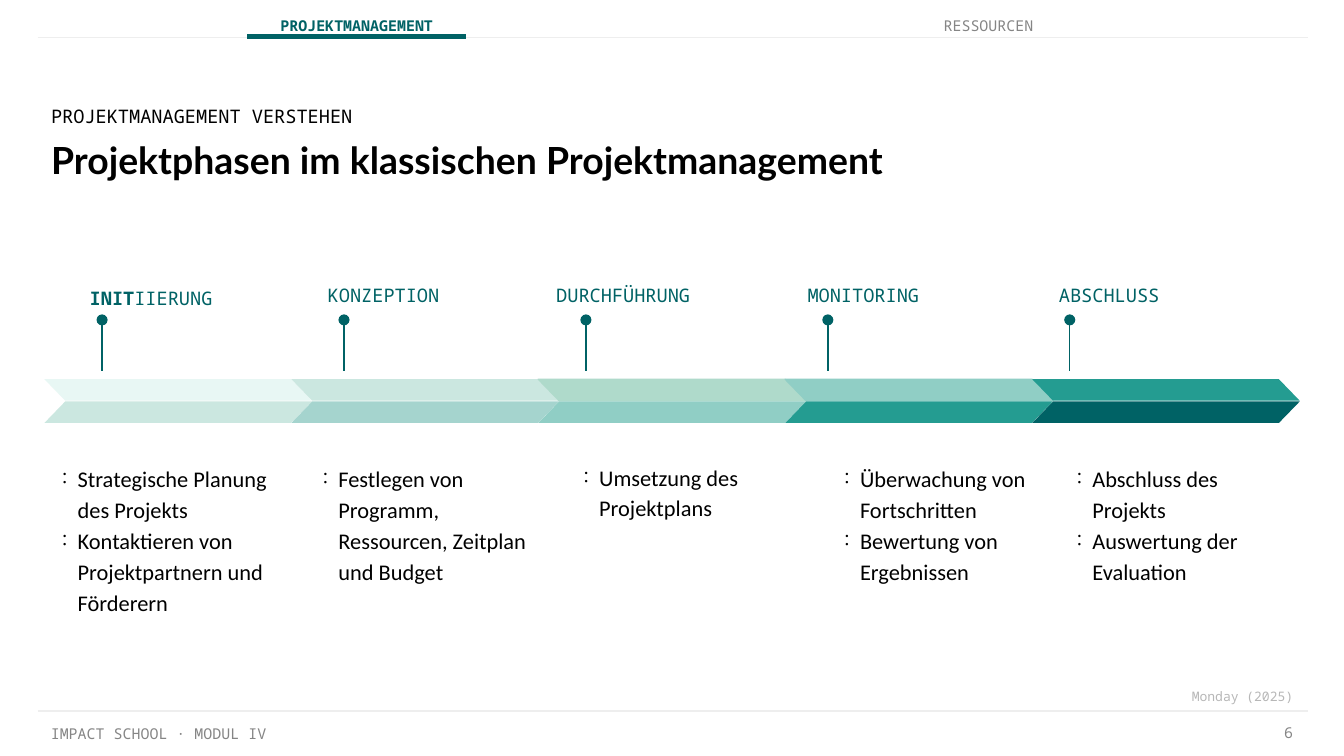
from pptx import Presentation
from pptx.dml.color import RGBColor
from pptx.enum.shapes import MSO_CONNECTOR, MSO_SHAPE
from pptx.enum.text import MSO_ANCHOR, MSO_AUTO_SIZE, PP_ALIGN
from pptx.oxml.ns import qn
from pptx.util import Pt
from lxml import etree

STRAIGHT = MSO_CONNECTOR.STRAIGHT
PARALLELOGRAM = MSO_SHAPE.PARALLELOGRAM
TOP, MIDDLE = MSO_ANCHOR.TOP, MSO_ANCHOR.MIDDLE
LEFT, CENTER, RIGHT = PP_ALIGN.LEFT, PP_ALIGN.CENTER, PP_ALIGN.RIGHT
NO_FIT = MSO_AUTO_SIZE.NONE

MONO, HEADING, BODY = "Noto Sans Mono", "Lato", "Calibri"
BLACK, TEAL, GRAY, PALE, RULE = "000000", "006265", "858585", "B7B7B7", "EEEEEE"

TITLE = "Projektphasen im klassischen Projektmanagement"
SUBTITLE = "PROJEKTMANAGEMENT VERSTEHEN"
FRAME_TEXTS = [
    ("IMPACT SCHOOL · MODUL IV", (20.16, 380.9, 453.6, 24.5), dict(size=8, color=GRAY)),
    ("6", (668.9, 380.9, 31, 24.5),
     dict(size=8, color=GRAY, align=RIGHT, anchor=MIDDLE, spacing=0.8)),
    ("PROJEKTMANAGEMENT", (128.2, 1.44, 126, 24.5),
     dict(size=8, color=TEAL, bold=True, align=CENTER, anchor=MIDDLE, side=0)),
    ("RESSOURCEN", (466.6, 1.44, 126, 24.5),
     dict(size=8, color=GRAY, align=CENTER, anchor=MIDDLE)),
    ("Monday (2025)", (308.2, 361.4, 391.7, 23), dict(size=7, color=PALE, align=RIGHT)),
]
FRAME_LINES = [
    (20.16, 700.5, 380.9, RULE, 0.75),
    (20.16, 700.5, 20.16, RULE, 0.75),
    (132.5, 249.8, 19.6, TEAL, 2.25),
]
PHASES = [
    dict(lead="INIT", label="IIERUNG", label_left=41, spacing=1.15,
         colors=("E8F7F4", "CBE7E0"), list_left=25.9, list_top=239.8, list_width=126.7,
         tasks=["Strategische Planung des Projekts",
                "Kontaktieren von Projektpartnern und Förderern"]),
    dict(label="KONZEPTION", label_left=168.5,
         colors=("CBE7E0", "A5D4CE"), list_left=165.6, list_top=239.8, list_width=126.7,
         tasks=["Festlegen von Programm, Ressourcen, Zeitplan und Budget"]),
    dict(label="DURCHFÜHRUNG", label_left=290.9, outlined=True,
         colors=("AFDACB", "90CEC5"), list_left=305.3, list_top=239.1, list_width=126.7,
         tasks=["Umsetzung des Projektplans"]),
    dict(label="MONITORING", label_left=425.5, outlined=True,
         colors=("90CEC5", "249C91"), list_left=445, list_top=239.8, list_width=111.6,
         tasks=["Überwachung von Fortschritten", "Bewertung von Ergebnissen"]),
    dict(label="ABSCHLUSS", label_left=560.2,
         colors=("249C91", TEAL), list_left=569.5, list_top=239.8, list_width=126.7,
         tasks=["Abschluss des Projekts", "Auswertung der Evaluation"]),
]

BAND_LEFT, BAND_STEP, BAND_WIDTH, BAND_HEIGHT = 23.8, 132.3, 143.3, 11.5
BAND_TOPS = (203.2, 215.1)
PIN_LEFT, PIN_STEP, PIN_TOP, PIN_BOTTOM = 54.7, 129.6, 171.4, 198.7


def rgb(color):
    """Turn a hex string into a colour."""
    return RGBColor.from_string(color)


def place(shape, box):
    """Move a shape to a box of left, top, width and height in points."""
    shape.left, shape.top, shape.width, shape.height = map(Pt, box)
    return shape


def add_bullet(paragraph):
    """Give a paragraph a hanging colon bullet."""
    properties = paragraph._p.get_or_add_pPr()
    properties.set("marL", str(Pt(8.64)))
    properties.set("indent", str(-Pt(8.64)))
    color = etree.SubElement(properties, qn("a:buClr"))
    etree.SubElement(color, qn("a:srgbClr"), val=BLACK)
    etree.SubElement(properties, qn("a:buSzPct"), val="99000")
    etree.SubElement(properties, qn("a:buChar"), char=":")


def write(shape, *lines, lead="", size=10, font=MONO, color=BLACK, bold=False,
          align=LEFT, anchor=TOP, spacing=1.0, side=7.2, bullet=False):
    """Fill a shape with formatted paragraphs, after an optional bold lead."""
    frame = shape.text_frame
    frame.word_wrap, frame.auto_size, frame.vertical_anchor = True, NO_FIT, anchor
    frame.margin_left = frame.margin_right = Pt(side)
    frame.margin_top = frame.margin_bottom = Pt(7.2)
    for index, line in enumerate(lines):
        paragraph = frame.add_paragraph() if index else frame.paragraphs[0]
        if bullet:
            add_bullet(paragraph)
        paragraph.alignment, paragraph.line_spacing = align, spacing
        paragraph.space_before = Pt(0)
        for text, weight in ((lead, True), (line, bold)):
            if text:
                run = paragraph.add_run()
                run.text = text
                run.font.size, run.font.name, run.font.bold = Pt(size), font, weight
                run.font.color.rgb = rgb(color)


def add_text(slide, box, *lines, **style):
    """Add a text box with formatted paragraphs."""
    write(slide.shapes.add_textbox(*map(Pt, box)), *lines, **style)


def add_line(slide, start, end, color, width, dot=False):
    """Add a straight line, with a dot at its start if wanted."""
    line = slide.shapes.add_connector(STRAIGHT, *map(Pt, start + end))
    line.line.color.rgb = rgb(color)
    line.line.width = Pt(width)
    properties = line.element.spPr
    if dot:
        etree.SubElement(properties.find(qn("a:ln")), qn("a:headEnd"), type="oval")
    etree.SubElement(properties, qn("a:effectLst"))


def add_band(slide, box, color, flipped, outlined):
    """Add one slanted half of a phase arrow."""
    band = slide.shapes.add_shape(PARALLELOGRAM, *map(Pt, box))
    band.shadow.inherit = False
    band.adjustments[0] = 0.97
    band.fill.solid()
    band.fill.fore_color.rgb = rgb(color)
    if outlined:
        band.line.color.rgb = rgb(color)
        band.line.width = Pt(0.75)
    else:
        band.line.fill.background()
    if flipped:
        band.element.spPr.xfrm.set("flipH", "1")


def add_phase(slide, index, phase):
    """Add the arrow, pin, label and task list of one phase."""
    left = BAND_LEFT + index * BAND_STEP
    for row, (top, color) in enumerate(zip(BAND_TOPS, phase["colors"])):
        upper = row == 0
        add_band(slide, (left, top, BAND_WIDTH, BAND_HEIGHT), color,
                 upper, upper and phase.get("outlined", False))
    pin = PIN_LEFT + index * PIN_STEP
    add_line(slide, (pin, PIN_TOP), (pin, PIN_BOTTOM), TEAL, 0.75, dot=True)
    add_text(slide, (phase["label_left"], 144.7, 97.2, 18.7), phase["label"],
             lead=phase.get("lead", ""), color=TEAL, spacing=phase.get("spacing", 1.0))
    add_text(slide, (phase["list_left"], phase["list_top"], phase["list_width"], 81),
             *phase["tasks"], size=12, font=BODY, spacing=1.15, bullet=True)


def main():
    """Build and save the slide."""
    presentation = Presentation()
    presentation.slide_width, presentation.slide_height = Pt(720), Pt(405)
    slide = presentation.slides.add_slide(presentation.slide_layouts[0])
    for left, right, top, color, width in FRAME_LINES:
        add_line(slide, (left, top), (right, top), color, width)
    for text, box, style in FRAME_TEXTS:
        add_text(slide, box, text, **style)
    title = place(slide.shapes.title, (20.16, 66.2, 559.4, 37.4))
    write(title, TITLE, size=20, font=HEADING, bold=True)
    subtitle = place(slide.placeholders[1], (20.16, 54.7, 559.4, 14.4))
    write(subtitle, SUBTITLE, anchor=MIDDLE)
    for index, phase in enumerate(PHASES):
        add_phase(slide, index, phase)
    presentation.save("out.pptx")


if __name__ == "__main__":
    main()
